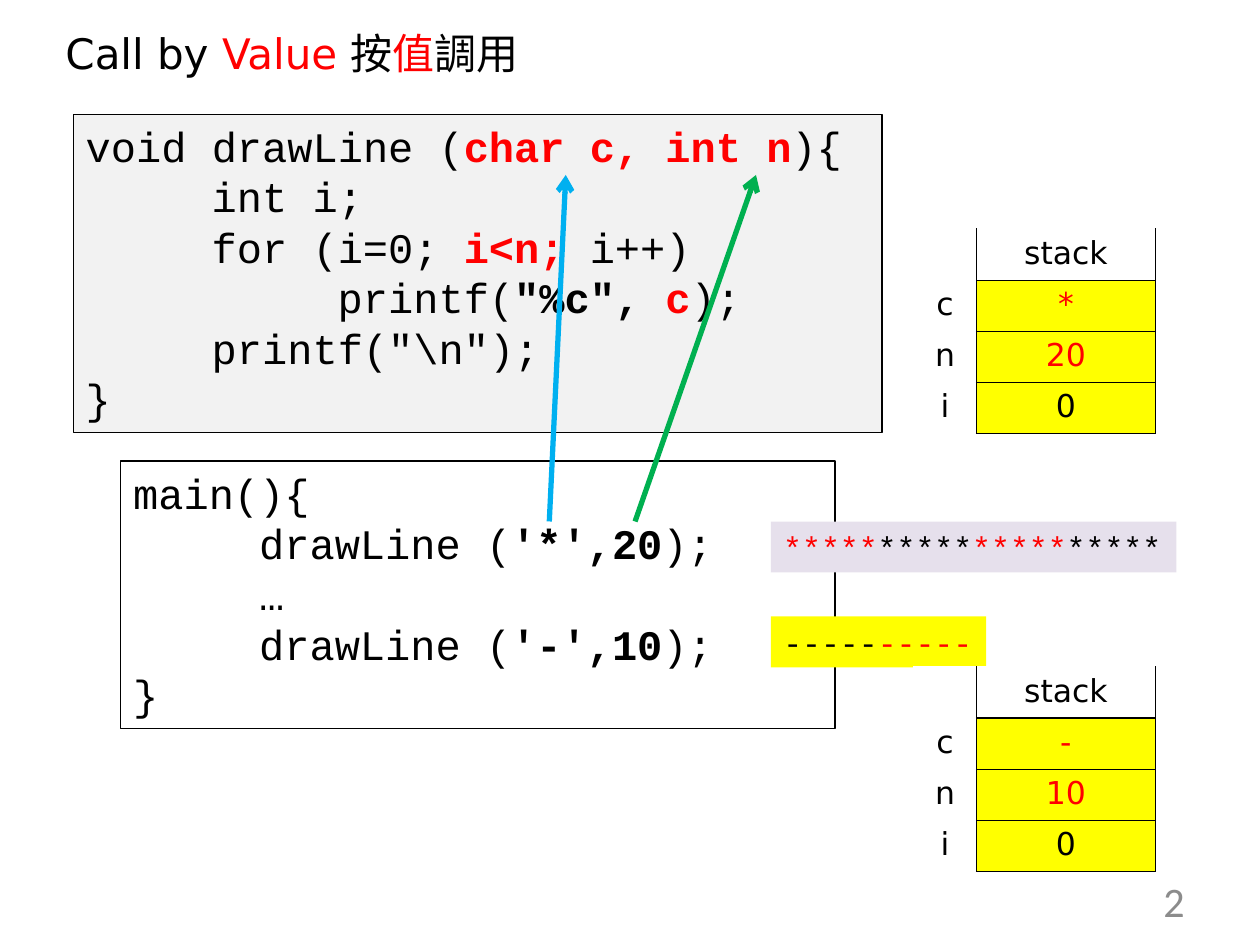
from lxml.etree import SubElement
from pptx import Presentation
from pptx.dml.color import RGBColor
from pptx.enum.shapes import MSO_CONNECTOR, MSO_SHAPE
from pptx.enum.text import MSO_ANCHOR, MSO_AUTO_SIZE, PP_ALIGN
from pptx.oxml.ns import qn
from pptx.util import Pt

BLACK, RED, YELLOW, WHITE = "000000", "FF0000", "FFFF00", "FFFFFF"
MONO, SANS = "Courier New", "DejaVu Sans"


def hue(target, code):
    """Colour a fill or a font."""
    if hasattr(target, "solid"):
        target.solid()
        target.fore_color.rgb = RGBColor.from_string(code)
    else:
        target.color.rgb = RGBColor.from_string(code)


def write(frame, lines, size, face, align=PP_ALIGN.LEFT):
    """Write lines of (text, colour, bold) runs."""
    for row, line in enumerate(lines):
        para = frame.add_paragraph() if row else frame.paragraphs[0]
        para.alignment = align
        if line[0][0].startswith("\t"):
            tabs = SubElement(para._p.get_or_add_pPr(), qn("a:tabLst"))
            for stop in (72, 144):
                SubElement(tabs, qn("a:tab"), pos=str(Pt(stop)), algn="l")
        for text, code, bold in line:
            run = para.add_run()
            run.text = text
            run.font.size, run.font.name, run.font.bold = Pt(size), face, bold
            hue(run.font, code)


deck = Presentation()
deck.slide_width, deck.slide_height = Pt(720), Pt(540)
slide = deck.slides.add_slide(deck.slide_layouts[5])
shapes = slide.shapes

# Title
title = shapes.title
title.left, title.top, title.width, title.height = Pt(30.2), Pt(12.2), Pt(293.8), Pt(36)
frame = title.text_frame
frame.word_wrap = True
frame.auto_size = MSO_AUTO_SIZE.NONE
frame.vertical_anchor = MSO_ANCHOR.TOP
write(frame, [[("Call by ", BLACK, False), ("Value ", RED, False), ("按", BLACK, False),
               ("值", RED, False), ("調用", BLACK, False)]], 24, SANS)

# Code and output boxes: place, fill, line, wrap, size, text
draw = [
    [("void drawLine (", BLACK, False), ("char c, int n", RED, True), ("){", BLACK, False)],
    [("\tint i;", BLACK, False)],
    [("\tfor (i=0; ", BLACK, False), ("i<n; ", RED, True), ("i++)", BLACK, False)],
    [("\t\tprintf(", BLACK, False), ('"%c", ', BLACK, True), ("c", RED, True),
     (");", BLACK, False)],
    [('\tprintf("\\n");', BLACK, False)],
    [("}", BLACK, False)],
]
main = [
    [("main(){", BLACK, False)],
    [("\tdrawLine (", BLACK, False), ("'*',20", BLACK, True), (");", BLACK, False)],
    [("\t…", BLACK, False)],
    [("\tdrawLine (", BLACK, False), ("'-',10", BLACK, True), (");", BLACK, False)],
    [("}", BLACK, False)],
]
stars = [[("*****", code, False) for code in (RED, BLACK, RED, BLACK)]]
dashes = [[("-----", code, False) for code in (BLACK, RED)]]
boxes = [
    ((41.9, 65.3, 462.2, 181.8), "F2F2F2", True, 24, draw),
    ((69, 263.5, 408.1, 152.7), None, True, 24, main),
    ((440.5, 298, 231.7, 29.1), "E6E0EC", False, 18, stars),
    ((440.5, 352.2, 123, 29.1), YELLOW, False, 18, dashes),
]
for place, fill, framed, size, lines in boxes:
    box = shapes.add_shape(MSO_SHAPE.RECTANGLE, *map(Pt, place))
    box.shadow.inherit = False
    if fill:
        hue(box.fill, fill)
    else:
        box.fill.background()
    if framed:
        hue(box.line.fill, BLACK)
        box.line.width = Pt(0.75)
    else:
        box.line.fill.background()
    box.text_frame.word_wrap = framed
    box.text_frame.vertical_anchor = MSO_ANCHOR.TOP
    write(box.text_frame, lines, size, MONO)

# Arrows from arguments to parameters
for ends, code in (((313.9, 298, 323.3, 100), "00B0F0"), ((362.9, 298, 432, 100), "00B050")):
    arrow = shapes.add_connector(MSO_CONNECTOR.STRAIGHT, *map(Pt, ends))
    hue(arrow.line.fill, code)
    arrow.line.width = Pt(3)
    SubElement(arrow.line._get_or_add_ln(), qn("a:tailEnd"), type="arrow")
    SubElement(arrow._element.spPr, qn("a:effectLst"))

# Stack tables
for top, char, count in ((131, "*", "20"), (381.2, "-", "10")):
    grid = shapes.add_table(4, 2, Pt(522), Pt(top), Pt(138.2), Pt(116.8)).table
    grid.first_row = grid.horz_banding = False
    grid.columns[0].width, grid.columns[1].width = Pt(36), Pt(102.2)
    rows = [("", "stack", BLACK), ("c", char, RED), ("n", count, RED), ("i", "0", BLACK)]
    for row, (name, value, code) in enumerate(rows):
        grid.rows[row].height = Pt(29.2)
        sides = "LRTB" if row else "LRB"
        cells = [(name, BLACK, WHITE, "R"), (value, code, YELLOW if row else WHITE, sides)]
        for col, (text, ink, fill, edges) in enumerate(cells):
            cell = grid.cell(row, col)
            for edge in edges:
                line = SubElement(cell._tc.get_or_add_tcPr(), qn("a:ln" + edge), w=str(Pt(1)))
                solid = SubElement(line, qn("a:solidFill"))
                SubElement(solid, qn("a:srgbClr"), val=BLACK)
            hue(cell.fill, fill)
            if text:
                write(cell.text_frame, [[(text, ink, False)]], 18, SANS, PP_ALIGN.CENTER)

# Slide number
page = shapes.add_textbox(Pt(516), Pt(500.5), Pt(168), Pt(28.8)).text_frame
page.word_wrap = True
page.vertical_anchor = MSO_ANCHOR.MIDDLE
write(page, [[("2", "8C8C8C", False)]], 24, "Calibri", PP_ALIGN.RIGHT)

deck.save("out.pptx")
